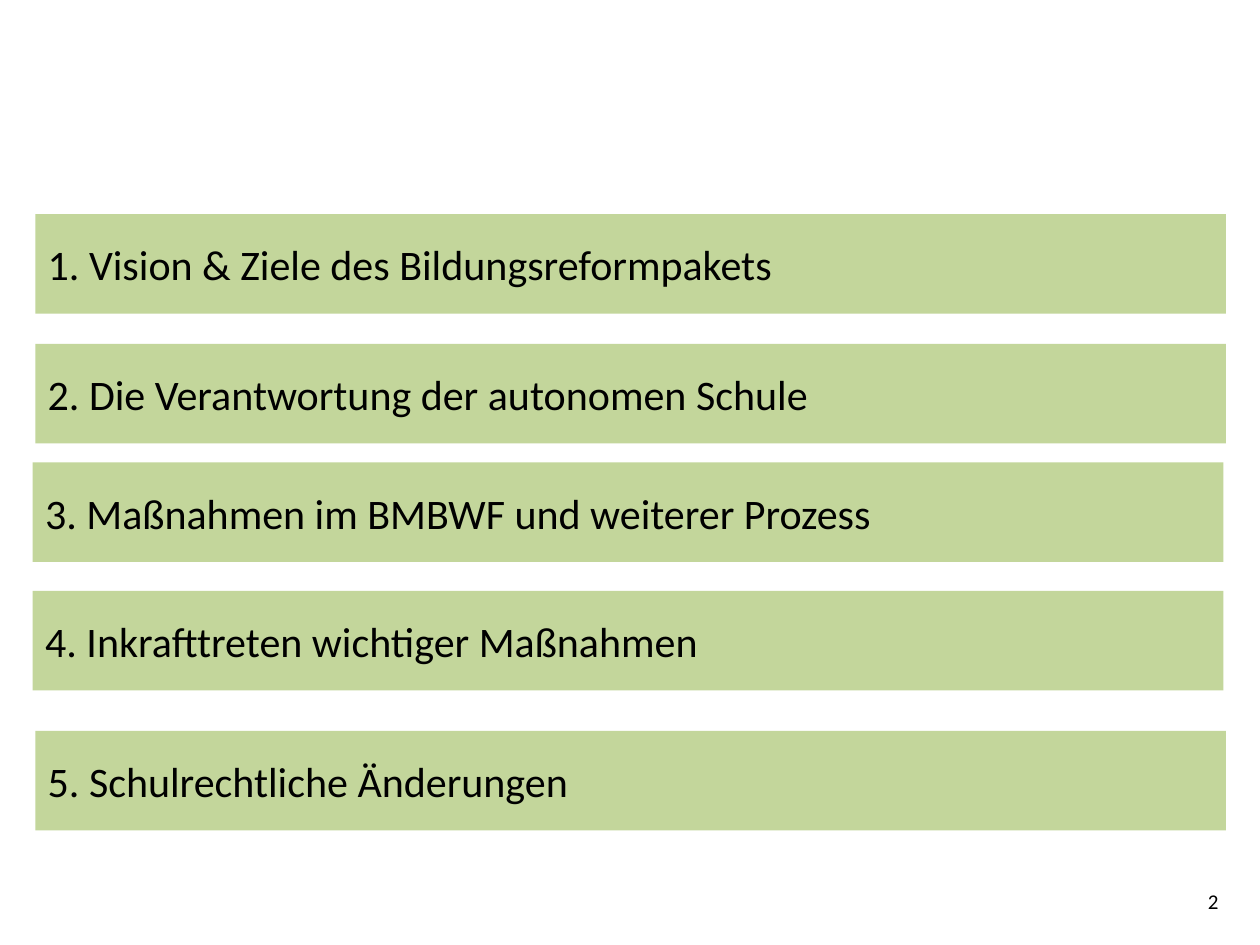
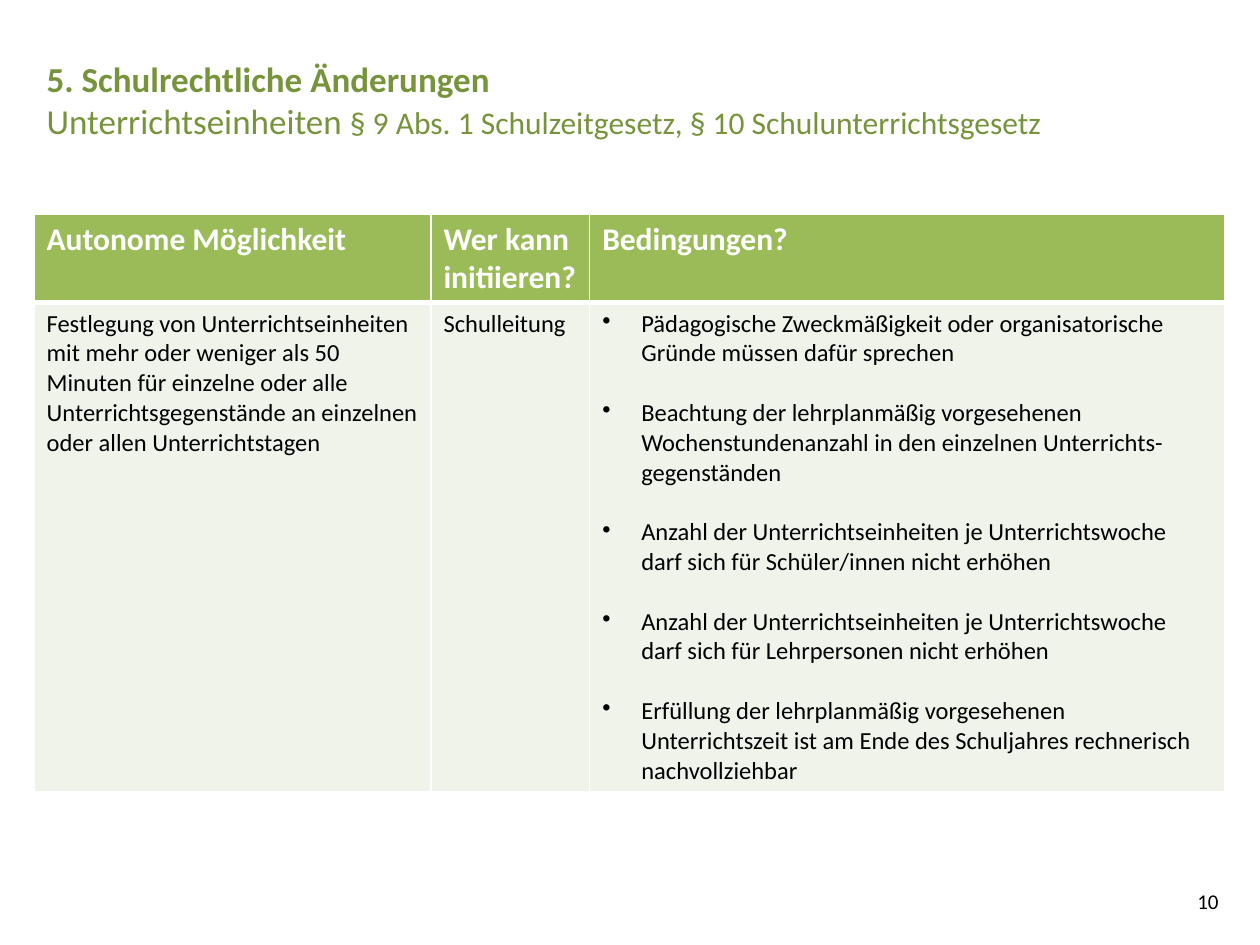
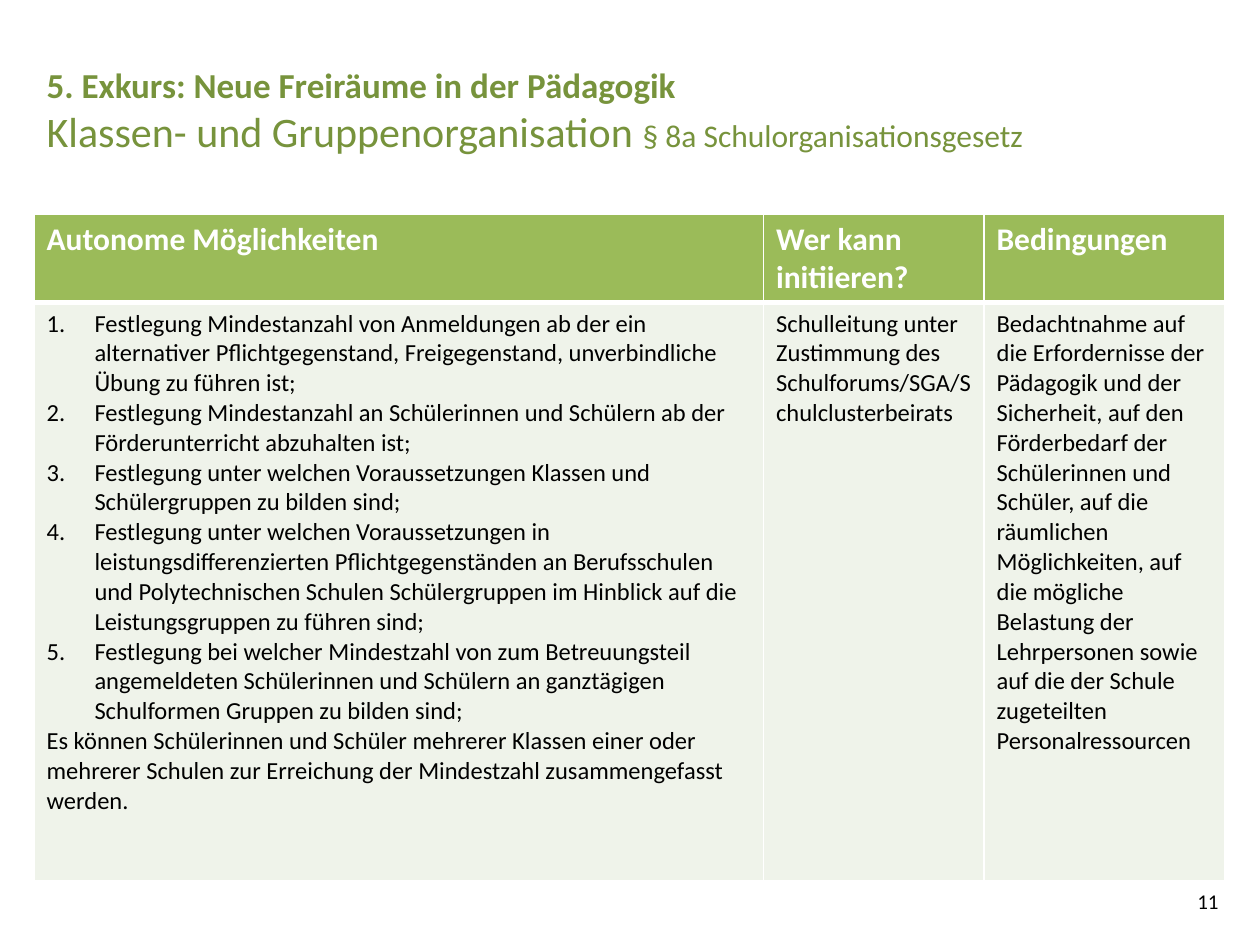
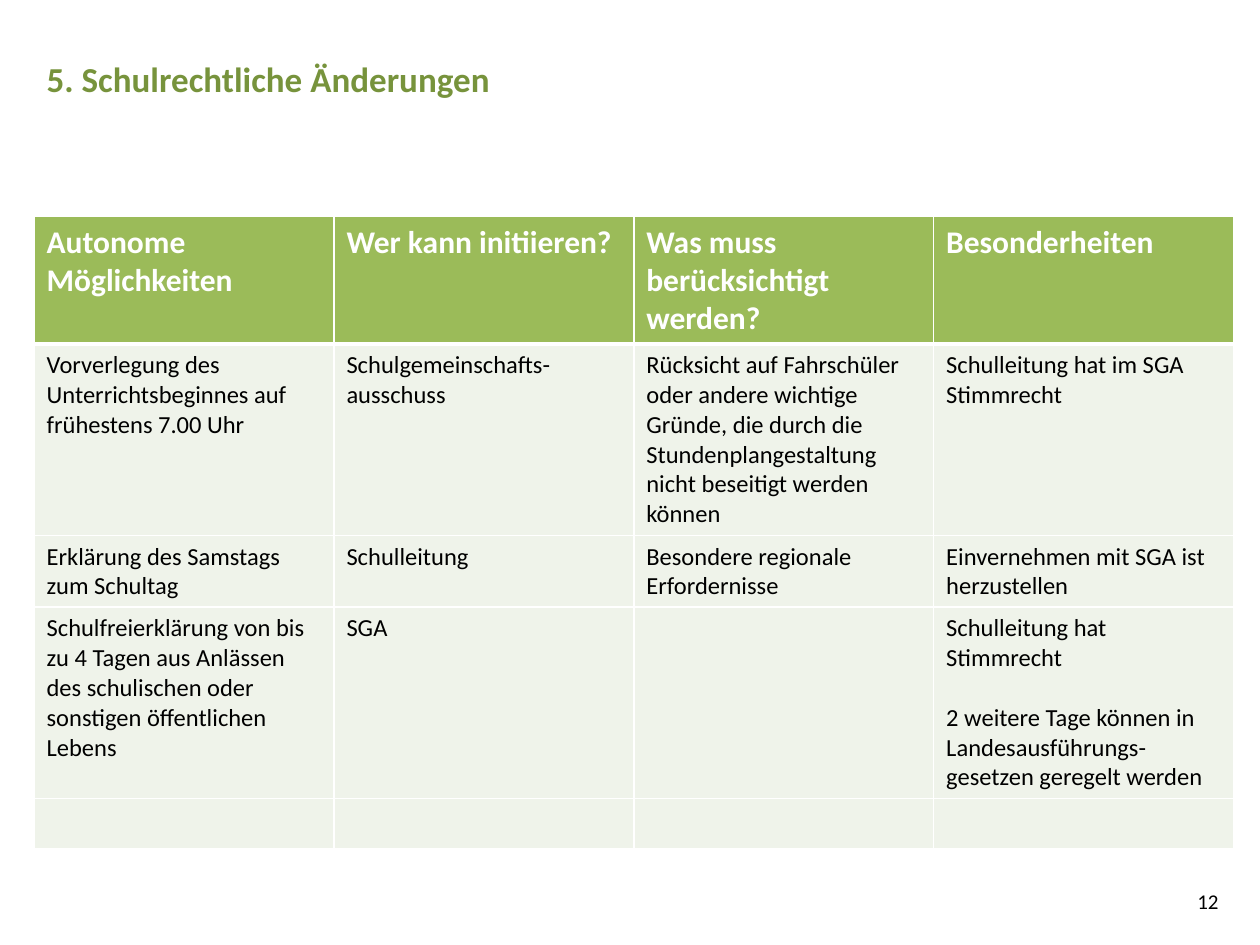
"""Build four slides on the school reform: an agenda and three tables of legal changes."""
from lxml.etree import SubElement
from pptx import Presentation
from pptx.dml.color import RGBColor
from pptx.enum.shapes import MSO_SHAPE
from pptx.enum.text import MSO_ANCHOR, MSO_AUTO_SIZE, PP_ALIGN
from pptx.oxml.ns import qn
from pptx.util import Inches, Pt

FONT = "Calibri"
BLACK, WHITE = "000000", "FFFFFF"
BAR, HEADING, HEADER, BODY = "C3D69B", "77933C", "9BBB59", "EFF3EA"
LEFT = 0.27
TITLE_ONLY, BLANK = 5, 6
PARAGRAPH_GAP = 17
STYLES = {
    "plain": {"indent": 0, "gap": 0},
    "apart": {"indent": 0, "gap": PARAGRAPH_GAP},
    "bullet": {"indent": 0.31, "gap": PARAGRAPH_GAP, "tag": "a:buChar", "marker": {"char": "•"}},
    "number": {"indent": 0.38, "gap": 0, "tag": "a:buAutoNum", "marker": {"type": "arabicPeriod"}},
}

AGENDA_PAGE = "2"
AGENDA = [
    (0.28, 1.7, "1. Vision & Ziele des Bildungsreformpakets"),
    (0.28, 2.73, "2. Die Verantwortung der autonomen Schule"),
    (0.26, 3.67, "3. Maßnahmen im BMBWF und weiterer Prozess"),
    (0.26, 4.69, "4. Inkrafttreten wichtiger Maßnahmen"),
    (0.28, 5.8, "5. Schulrechtliche Änderungen"),
]

TABLE_SLIDES = [
    {
        "page": "10",
        "title": "5. Schulrechtliche Änderungen",
        "subtitle": [
            ("Unterrichtseinheiten ", 20),
            ("§ 9 Abs. 1 Schulzeitgesetz, § 10 Schulunterrichtsgesetz", 18),
        ],
        "title_top": 0.41,
        "table_top": 1.7,
        "columns": [3.15, 1.26, 5.04],
        "heights": [0.7, 3.88],
        "rows": [
            ["Autonome Möglichkeit", "Wer kann initiieren?", "Bedingungen?"],
            [
                "Festlegung von Unterrichtseinheiten mit mehr oder weniger als 50 Minuten für einzelne "
                "oder alle Unterrichtsgegenstände an einzelnen oder allen Unterrichtstagen",
                "Schulleitung",
                [
                    ("bullet", "Pädagogische Zweckmäßigkeit oder organisatorische Gründe müssen dafür sprechen"),
                    ("bullet", "Beachtung der lehrplanmäßig vorgesehenen Wochenstundenanzahl in den "
                               "einzelnen Unterrichts-gegenständen"),
                    ("bullet", "Anzahl der Unterrichtseinheiten je Unterrichtswoche darf sich für "
                               "Schüler/innen nicht erhöhen"),
                    ("bullet", "Anzahl der Unterrichtseinheiten je Unterrichtswoche darf sich für "
                               "Lehrpersonen nicht erhöhen"),
                    ("bullet", "Erfüllung der lehrplanmäßig vorgesehenen Unterrichtszeit ist am Ende des "
                               "Schuljahres rechnerisch nachvollziehbar"),
                ],
            ],
        ],
    },
    {
        "page": "11",
        "title": "5. Exkurs: Neue Freiräume in der Pädagogik",
        "subtitle": [
            ("Klassen- und Gruppenorganisation ", 24),
            ("§ 8a Schulorganisationsgesetz", 18),
        ],
        "title_top": 0.45,
        "table_top": 1.7,
        "columns": [5.79, 1.75, 1.91],
        "heights": [0.7, 4.59],
        "rows": [
            ["Autonome Möglichkeiten", "Wer kann initiieren?", "Bedingungen"],
            [
                [
                    ("number", "Festlegung Mindestanzahl von Anmeldungen ab der ein alternativer "
                               "Pflichtgegenstand, Freigegenstand, unverbindliche Übung zu führen ist;"),
                    ("number", "Festlegung Mindestanzahl an Schülerinnen und Schülern ab der "
                               "Förderunterricht abzuhalten ist;"),
                    ("number", "Festlegung unter welchen Voraussetzungen Klassen und Schülergruppen "
                               "zu bilden sind;"),
                    ("number", "Festlegung unter welchen Voraussetzungen in leistungsdifferenzierten "
                               "Pflichtgegenständen an Berufsschulen und Polytechnischen Schulen "
                               "Schülergruppen im Hinblick auf die Leistungsgruppen zu führen sind;"),
                    ("number", "Festlegung bei welcher Mindestzahl von zum Betreuungsteil angemeldeten "
                               "Schülerinnen und Schülern an ganztägigen Schulformen Gruppen zu bilden sind;"),
                    ("plain", "Es können Schülerinnen und Schüler mehrerer Klassen einer oder mehrerer "
                              "Schulen zur Erreichung der Mindestzahl zusammengefasst werden."),
                ],
                "Schulleitung unter Zustimmung des Schulforums/SGA/Schulclusterbeirats",
                "Bedachtnahme auf die Erfordernisse der Pädagogik und der Sicherheit, auf den Förderbedarf "
                "der Schülerinnen und Schüler, auf die räumlichen Möglichkeiten, auf die mögliche Belastung "
                "der Lehrpersonen sowie auf die der Schule zugeteilten Personalressourcen",
            ],
        ],
    },
    {
        "page": "12",
        "title": "5. Schulrechtliche Änderungen",
        "subtitle": [],
        "title_top": 0.41,
        "table_top": 1.72,
        "columns": [2.38] * 4,
        "heights": [1.01, 1.52, 0.57, 1.52, 0.4],
        "rows": [
            ["Autonome Möglichkeiten", "Wer kann initiieren?", "Was muss berücksichtigt werden?",
             "Besonderheiten"],
            ["Vorverlegung des Unterrichtsbeginnes auf frühestens 7.00 Uhr",
             "Schulgemeinschafts-ausschuss",
             "Rücksicht auf Fahrschüler oder andere wichtige Gründe, die durch die "
             "Stundenplangestaltung nicht beseitigt werden können",
             "Schulleitung hat im SGA Stimmrecht"],
            ["Erklärung des Samstags zum Schultag", "Schulleitung",
             "Besondere regionale Erfordernisse", "Einvernehmen mit SGA ist herzustellen"],
            ["Schulfreierklärung von bis zu 4 Tagen aus Anlässen des schulischen oder sonstigen "
             "öffentlichen Lebens",
             "SGA", "",
             [("plain", "Schulleitung hat Stimmrecht"),
              ("apart", "2 weitere Tage können in Landesausführungs-gesetzen geregelt werden")]],
            [""] * 4,
        ],
    },
]


def rgb(value):
    """Turn a hex string into a colour."""
    return RGBColor.from_string(value)


def format_span(span, size, color=BLACK, bold=False):
    """Set the font of one run."""
    span.font.name, span.font.size, span.font.bold = FONT, Pt(size), bold
    span.font.color.rgb = rgb(color)


def write_line(paragraph, text, size, color=BLACK, bold=False, align=PP_ALIGN.LEFT):
    """Fill one paragraph and format its runs."""
    paragraph.text = text
    paragraph.alignment = align
    for span in paragraph.runs:
        format_span(span, size, color, bold)


def add_page_number(slide, number):
    """Put the page number at the lower right."""
    box = slide.shapes.add_textbox(Inches(7.44), Inches(6.95), Inches(2.33), Inches(0.4))
    box.text_frame.word_wrap = True
    box.text_frame.vertical_anchor = MSO_ANCHOR.MIDDLE
    write_line(box.text_frame.paragraphs[0], number, 12, align=PP_ALIGN.RIGHT)


def add_agenda_bar(slide, left, top, text):
    """Draw one agenda entry as a filled bar."""
    bar = slide.shapes.add_shape(
        MSO_SHAPE.RECTANGLE, Inches(left), Inches(top), Inches(9.45), Inches(0.79))
    bar.shadow.inherit = False
    bar.fill.solid()
    bar.fill.fore_color.rgb = rgb(BAR)
    bar.line.fill.background()
    bar.text_frame.vertical_anchor = MSO_ANCHOR.MIDDLE
    write_line(bar.text_frame.paragraphs[0], text, 24)


def set_title(slide, heading, subtitle, top):
    """Place the title with its bold heading and lighter second line."""
    title = slide.shapes.title
    title.left, title.top = Inches(LEFT), Inches(top)
    title.width, title.height = Inches(8.96), Inches(0.99)
    frame = title.text_frame
    frame.auto_size = MSO_AUTO_SIZE.NONE
    frame.vertical_anchor = MSO_ANCHOR.TOP
    paragraph = frame.paragraphs[0]
    write_line(paragraph, heading, 20, HEADING, True)
    if subtitle:
        paragraph.add_line_break()
    for text, size in subtitle:
        span = paragraph.add_run()
        span.text = text
        format_span(span, size, HEADING)


def set_borders(cell, top, bottom):
    """Give a cell white borders with the given top and bottom widths."""
    properties = cell._tc.get_or_add_tcPr()
    for tag, width in (("a:lnL", 1), ("a:lnR", 1), ("a:lnT", top), ("a:lnB", bottom)):
        line = SubElement(properties, qn(tag), w=str(Pt(width)))
        fill = SubElement(line, qn("a:solidFill"))
        SubElement(fill, qn("a:srgbClr"), val=WHITE)


def apply_style(paragraph, style, first):
    """Add the marker, indent and gap of a paragraph style."""
    if style["indent"]:
        properties = paragraph._p.get_or_add_pPr()
        properties.set("marL", str(Inches(style["indent"])))
        properties.set("indent", str(-Inches(style["indent"])))
        SubElement(properties, qn(style["tag"]), style["marker"])
    if style["gap"] and not first:
        paragraph.space_before = Pt(style["gap"])


def fill_cell(cell, content, row_index):
    """Write and colour one cell of the header or the body."""
    is_header = row_index == 0
    set_borders(cell, 3 if row_index == 1 else 1, 3 if is_header else 1)
    cell.fill.solid()
    cell.fill.fore_color.rgb = rgb(HEADER if is_header else BODY)
    size, color = (18, WHITE) if is_header else (14, BLACK)
    lines = [("plain", content)] if isinstance(content, str) else content
    for index, (style, text) in enumerate(lines):
        frame = cell.text_frame
        paragraph = frame.paragraphs[0] if index == 0 else frame.add_paragraph()
        apply_style(paragraph, STYLES[style], index == 0)
        write_line(paragraph, text, size, color, is_header)


def add_rules_table(slide, top, columns, heights, rows):
    """Build the table of autonomous options."""
    table = slide.shapes.add_table(
        len(rows), len(columns), Inches(LEFT), Inches(top),
        Inches(sum(columns)), Inches(sum(heights))).table
    table.horz_banding = False
    for column, width in zip(table.columns, columns):
        column.width = Inches(width)
    for row_index, (row, height, contents) in enumerate(zip(table.rows, heights, rows)):
        row.height = Inches(height)
        for cell, content in zip(row.cells, contents):
            fill_cell(cell, content, row_index)


def main():
    """Build and save the deck."""
    deck = Presentation()
    deck.slide_width, deck.slide_height = Inches(10), Inches(7.5)
    agenda = deck.slides.add_slide(deck.slide_layouts[BLANK])
    add_page_number(agenda, AGENDA_PAGE)
    for left, top, text in AGENDA:
        add_agenda_bar(agenda, left, top, text)
    for content in TABLE_SLIDES:
        slide = deck.slides.add_slide(deck.slide_layouts[TITLE_ONLY])
        set_title(slide, content["title"], content["subtitle"], content["title_top"])
        add_page_number(slide, content["page"])
        add_rules_table(slide, content["table_top"], content["columns"],
                        content["heights"], content["rows"])
    deck.save("out.pptx")


if __name__ == "__main__":
    main()
